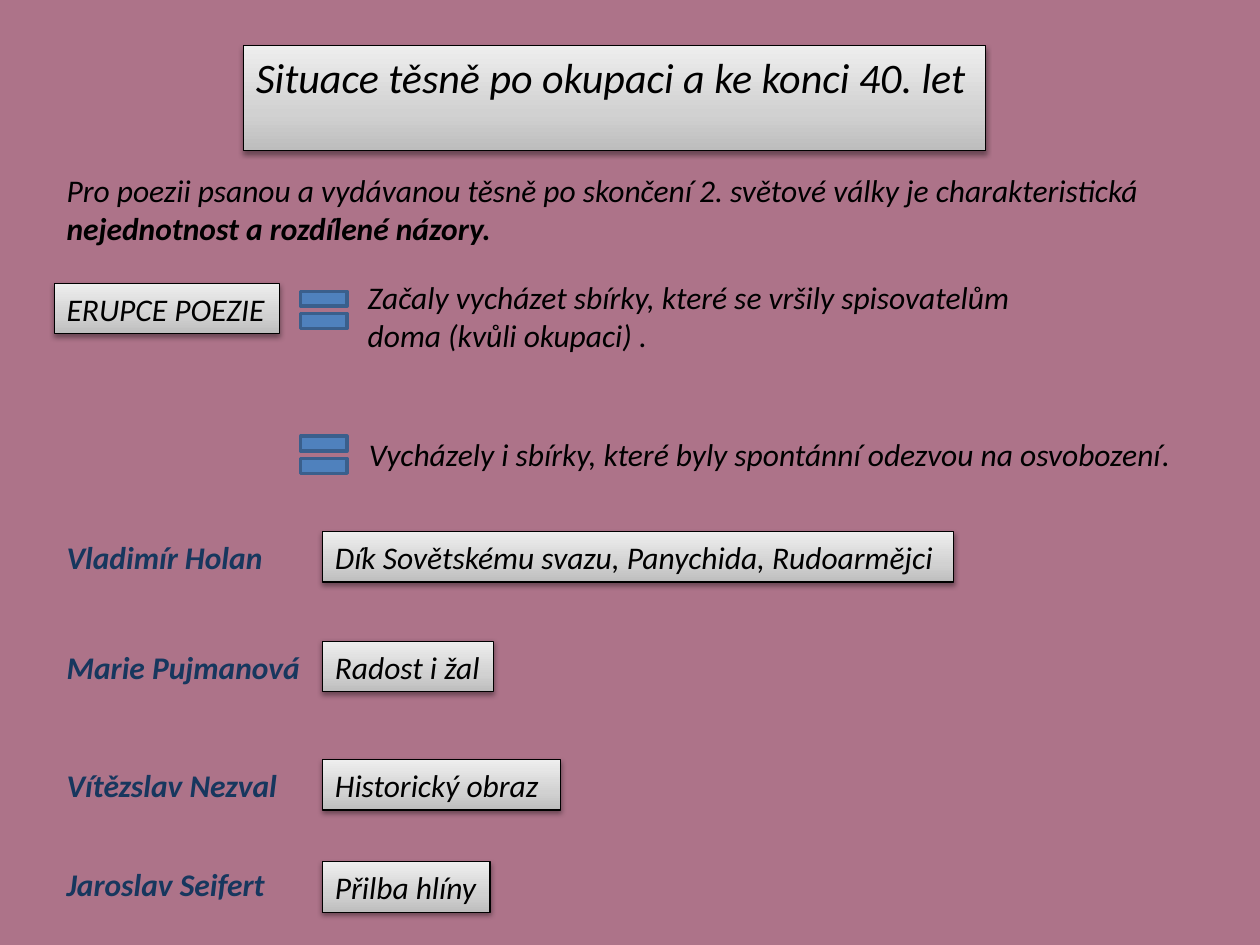
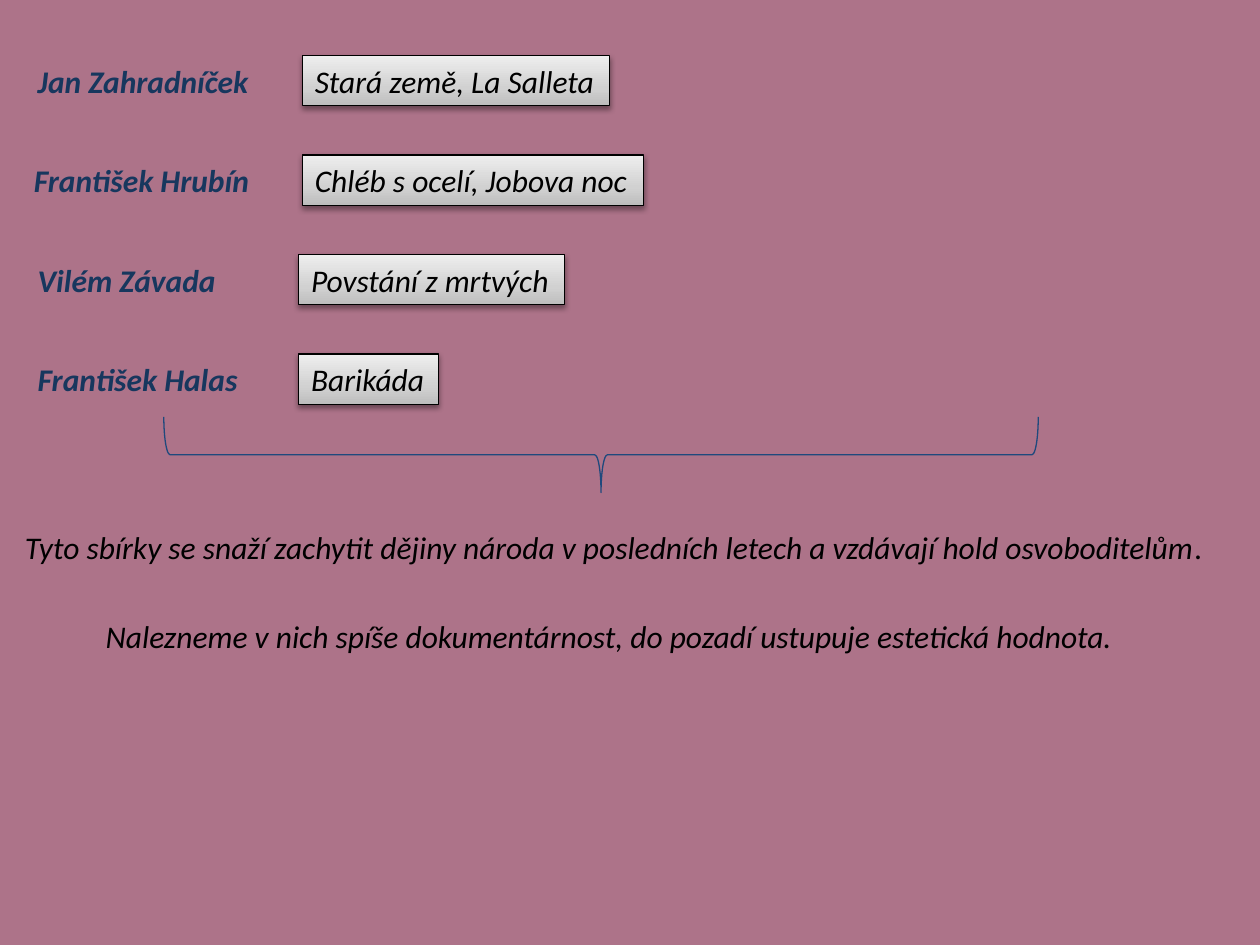
from dataclasses import dataclass

from lxml.etree import SubElement
from pptx import Presentation
from pptx.dml.color import RGBColor
from pptx.enum.shapes import MSO_SHAPE
from pptx.enum.text import MSO_ANCHOR, MSO_AUTO_SIZE, PP_ALIGN
from pptx.oxml.ns import qn
from pptx.util import Inches, Pt


@dataclass(frozen=True)
class Theme:
    font: str = "Calibri"
    title_size: int = 24
    text_size: int = 18
    background: str = "AD7389"
    ink: str = "000000"
    author: str = "17375E"
    equal_fill: str = "4F81BD"
    equal_line: str = "3A5F8C"
    brace: str = "1F497D"
    plate_stops: tuple = ((0, "BDBDBD"), (35, "D1D1D1"), (100, "EEEEEE"))


THEME = Theme()
LINE_H = 0.4

# Content: lengths in inches, a paragraph is a list of (text, format) runs
PLAIN, STRONG, UPRIGHT = {}, {"bold": True}, {"italic": False}
AUTHOR = {"bold": True, "color": THEME.author}

TITLE = ("Situace těsně po okupaci a ke konci 40. let", (1.93, 0.36, 5.89, 0.5))
ERUPTION = ("ERUPCE POEZIE", (0.43, 2.25, 1.79, LINE_H))
EQUALS_LEFT, EQUALS_SIZE, EQUALS_TOPS = 2.32, 0.5, (2.21, 3.36)

# (box, wraps, paragraphs)
SITUATION_TEXTS = [
    ((0.43, 1.31, 8.89, 0.71), False, [
        [("Pro poezii psanou a vydávanou těsně po skončení 2. světové války je charakteristická", PLAIN)],
        [("nejednotnost a rozdílené názory.", STRONG)]]),
    ((2.82, 2.16, 5.83, 0.71), True, [
        [("Začaly vycházet sbírky, které se vršily spisovatelům doma (kvůli okupaci) .", PLAIN)]]),
    ((2.83, 3.4, 6.68, LINE_H), False, [
        [("Vycházely i sbírky, které byly spontánní odezvou na osvobození", PLAIN), (".", UPRIGHT)]]),
]
SUMMARY_TEXTS = [
    ((0.1, 4.14, 9.64, LINE_H), False, [
        [("Tyto sbírky se snaží zachytit dějiny národa v posledních letech a vzdávají hold osvoboditelům", PLAIN),
         (".", UPRIGHT)]]),
    ((0.74, 4.85, 8.38, LINE_H), False, [
        [("Nalezneme v nich spíše dokumentárnost, do pozadí ustupuje estetická hodnota.", PLAIN)]]),
]

# (author, left, width), (works, left, width)
FIRST_POETS = [
    (("Vladimír Holan", 0.43, 1.77), ("Dík Sovětskému svazu, Panychida, Rudoarmějci", 2.56, 5.01)),
    (("Marie Pujmanová", 0.43, 2.08), ("Radost i žal", 2.56, 1.36)),
    (("Vítězslav Nezval", 0.43, 1.89), ("Historický obraz", 2.56, 1.89)),
    (("Jaroslav Seifert", 0.43, 1.8), ("Přilba hlíny", 2.56, 1.33)),
]
FIRST_TOPS = [(4.22, 4.22), (5.09, 5.09), (6.03, 6.03), (6.82, 6.84)]
MORE_POETS = [
    (("Jan Zahradníček", 0.2, 1.89), ("Stará země, La Salleta", 2.4, 2.44)),
    (("František Hrubín", 0.17, 1.93), ("Chléb s ocelí, Jobova noc", 2.4, 2.71)),
    (("Vilém Závada", 0.2, 1.63), ("Povstání z mrtvých", 2.37, 2.11)),
    (("František Halas", 0.2, 1.81), ("Barikáda", 2.37, 1.11)),
]
MORE_TOP, MORE_STEP = 0.44, 0.79
BRACE_BOX = (4.47, 0.14, 0.6, 6.94)


def inches(box):
    return [Inches(length) for length in box]


def write(shape, paragraphs, wraps=False, size=THEME.text_size):
    frame = shape.text_frame
    frame_format = {"word_wrap": wraps, "auto_size": MSO_AUTO_SIZE.SHAPE_TO_FIT_TEXT,
                    "vertical_anchor": MSO_ANCHOR.TOP}
    for attribute, value in frame_format.items():
        setattr(frame, attribute, value)
    for index, runs in enumerate(paragraphs):
        paragraph = frame.add_paragraph() if index else frame.paragraphs[0]
        paragraph.alignment = PP_ALIGN.LEFT
        for text, changes in runs:
            run = paragraph.add_run()
            run.text = text
            run_format = {"name": THEME.font, "size": Pt(size), "italic": True,
                          "bold": False, "color": THEME.ink} | changes
            run.font.color.rgb = RGBColor.from_string(run_format.pop("color"))
            for attribute, value in run_format.items():
                setattr(run.font, attribute, value)


def add_text(slide, box, wraps, paragraphs):
    write(slide.shapes.add_textbox(*inches(box)), paragraphs, wraps)


def outline(shape, color, width):
    shape.line.color.rgb = RGBColor.from_string(color)
    shape.line.width = Pt(width)
    shape.shadow.inherit = False


def style_plate(shape):
    """Grey gradient, thin black outline and a soft shadow below."""
    shape.fill.gradient()
    shape.fill.gradient_angle = 90
    properties = shape.element.spPr
    stops = properties.find(qn("a:gradFill")).find(qn("a:gsLst"))
    for stop in list(stops):
        stops.remove(stop)
    for position, color in THEME.plate_stops:
        stop = SubElement(stops, qn("a:gs"), pos=str(position * 1000))
        SubElement(stop, qn("a:srgbClr"), val=color)
    outline(shape, THEME.ink, 0.75)
    shadow = SubElement(properties.find(qn("a:effectLst")), qn("a:outerShdw"),
                        blurRad=str(Pt(3.1)), dist=str(Pt(1.6)), dir="5400000", rotWithShape="0")
    shade = SubElement(shadow, qn("a:srgbClr"), val=THEME.ink)
    SubElement(shade, qn("a:alpha"), val="38000")


def add_plate(slide, text, box):
    plate = slide.shapes.add_shape(MSO_SHAPE.RECTANGLE, *inches(box))
    style_plate(plate)
    write(plate, [[(text, PLAIN)]])


def add_poets(slide, poets, tops):
    for (author, works), (author_top, works_top) in zip(poets, tops):
        name, left, width = author
        add_text(slide, (left, author_top, width, LINE_H), False, [[(name, AUTHOR)]])
        titles, left, width = works
        add_plate(slide, titles, (left, works_top, width, LINE_H))


def build_situation(deck):
    slide = deck.slides.add_slide(deck.slide_layouts[5])
    # Title plate
    text, box = TITLE
    title = slide.shapes.title
    title.left, title.top, title.width, title.height = inches(box)
    style_plate(title)
    write(title, [[(text, PLAIN)]], size=THEME.title_size)
    # The eruption of poetry and its two meanings
    add_plate(slide, *ERUPTION)
    for top in EQUALS_TOPS:
        equals = slide.shapes.add_shape(
            MSO_SHAPE.MATH_EQUAL, *inches((EQUALS_LEFT, top, EQUALS_SIZE, EQUALS_SIZE)))
        equals.fill.solid()
        equals.fill.fore_color.rgb = RGBColor.from_string(THEME.equal_fill)
        outline(equals, THEME.equal_line, 2)
    for entry in SITUATION_TEXTS:
        add_text(slide, *entry)
    add_poets(slide, FIRST_POETS, FIRST_TOPS)


def build_summary(deck):
    slide = deck.slides.add_slide(deck.slide_layouts[6])
    tops = [MORE_TOP + row * MORE_STEP for row in range(len(MORE_POETS))]
    add_poets(slide, MORE_POETS, zip(tops, tops))
    # Brace gathering the poets above the summary
    brace = slide.shapes.add_shape(MSO_SHAPE.RIGHT_BRACE, *inches(BRACE_BOX))
    brace.rotation = 90
    brace.fill.background()
    outline(brace, THEME.brace, 0.75)
    for entry in SUMMARY_TEXTS:
        add_text(slide, *entry)


def main():
    deck = Presentation()
    deck.slide_width, deck.slide_height = Inches(10), Inches(7.5)
    backdrop = deck.slide_master.background.fill
    backdrop.solid()
    backdrop.fore_color.rgb = RGBColor.from_string(THEME.background)
    build_situation(deck)
    build_summary(deck)
    deck.save("out.pptx")


if __name__ == "__main__":
    main()
